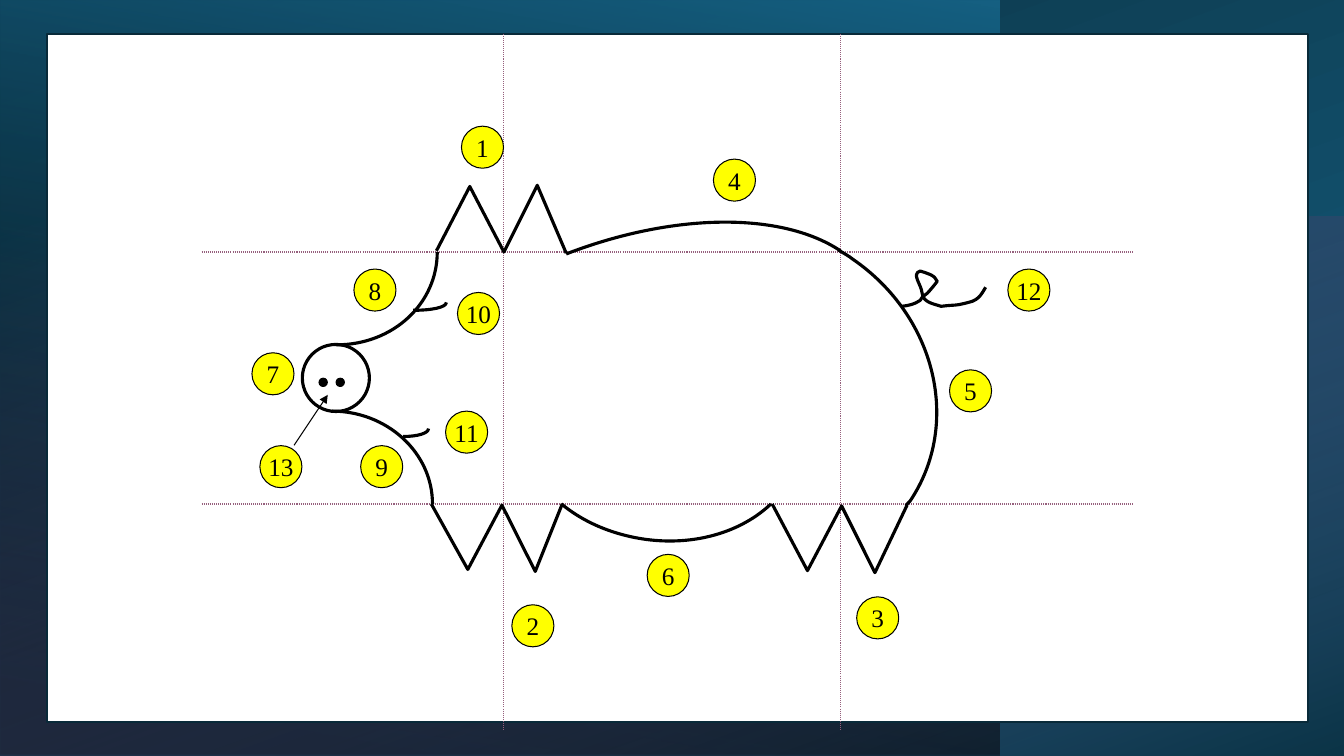
from lxml import etree
from pptx import Presentation
from pptx.dml.color import RGBColor
from pptx.enum.dml import MSO_LINE
from pptx.enum.shapes import MSO_CONNECTOR, MSO_SHAPE
from pptx.enum.text import MSO_ANCHOR, PP_ALIGN
from pptx.oxml import parse_xml
from pptx.oxml.ns import nsdecls, qn
from pptx.util import Cm, Pt

RECT, OVAL = MSO_SHAPE.RECTANGLE, MSO_SHAPE.OVAL
STRAIGHT = MSO_CONNECTOR.STRAIGHT
DOTTED = MSO_LINE.ROUND_DOT
MIDDLE, CENTER = MSO_ANCHOR.MIDDLE, PP_ALIGN.CENTER
BLACK, WHITE, YELLOW = "000000", "FFFFFF", "FFFF00"
W, H = 33.87, 19.05
BADGE = 1.06
BADGE_FONT = {"name": "Times New Roman", "size": Pt(18)}
rgb = RGBColor.from_string


def add_figure(shapes, kind, box, fill, line, width):
    """Add a preset shape; box is left, top, width, height in cm."""
    sp = shapes.add_shape(kind, *map(Cm, box))
    sp.shadow.inherit = False
    if fill:
        sp.fill.solid()
        sp.fill.fore_color.rgb = rgb(fill)
    else:
        sp.fill.background()
    sp.line.color.rgb = rgb(line)
    sp.line.width = Pt(width)
    return sp


def add_line(shapes, ends, color):
    """Add a thin straight line; ends is x1, y1, x2, y2 in cm."""
    cx = shapes.add_connector(STRAIGHT, *map(Cm, ends))
    cx.line.color.rgb = rgb(color)
    cx.line.width = Pt(0.75)
    etree.SubElement(cx.element.spPr, qn("a:effectLst"))
    return cx


prs = Presentation()
prs.slide_width, prs.slide_height = Cm(W), Cm(H)
s = prs.slides.add_slide(prs.slide_layouts[6])

# Background: box, rotation, gradient angle, stops (position %, colour, opacity %)
backdrops = [
    ((7.41, -7.41, H, W), 270, 200, [(8, "156082", 100), (100, "0B3041", 100)]),
    ((0, 0, 25.2, H), 180, 80, [(8, BLACK, 52), (100, "156082", 100)]),
    ((10.13, -4.67, 13.59, W), 270, 20, [(0, "D86ECC", 0), (100, BLACK, 46)]),
]
for box, rotation, angle, stops in backdrops:
    sp = s.shapes.add_shape(RECT, *map(Cm, box))
    sp.shadow.inherit = False
    sp.line.fill.background()
    sp.rotation = rotation
    spPr = sp.element.spPr
    spPr.find(qn("a:xfrm")).set("flipH", "1")
    gs = "".join(
        f'<a:gs pos="{pos * 1000}"><a:srgbClr val="{color}">'
        f'<a:alpha val="{alpha * 1000}"/></a:srgbClr></a:gs>'
        for pos, color, alpha in stops)
    spPr.insert(2, parse_xml(
        f'<a:gradFill {nsdecls("a")} rotWithShape="1"><a:gsLst>{gs}</a:gsLst>'
        f'<a:lin ang="{angle * 60000}" scaled="0"/></a:gradFill>'))

add_figure(s.shapes, RECT, (1.19, 0.85, 31.78, 17.35), WHITE, "092A39", 1.5)

guides = [(x, 0.85, x, 18.42) for x in (12.7, 21.17)]
guides += [(5.08, y, 28.58, y) for y in (6.35, 12.7)]
for ends in guides:
    add_line(s.shapes, ends, "96607D").line.dash_style = DOTTED

# Pig parts in drawing order: badge corner, curved or not, outline points.
# A curved outline has a start point, then three points per Bézier segment.
ears = [(11, 6.32), (11.84, 4.7), (12.7, 6.35), (13.54, 4.67), (14.27, 6.38)]
front_legs = [(10.87, 12.7), (11.79, 14.35), (12.65, 12.73), (13.49, 14.4),
              (14.17, 12.7)]
hind_legs = [(19.46, 12.7), (20.35, 14.38), (21.21, 12.75), (22.05, 14.43),
             (22.86, 12.73)]
back = [(14.27, 6.4), (16.97, 5.36), (19.69, 5.33), (21.18, 6.32)]
rump = [(21.13, 6.3), (21.26, 6.38), (21.39, 6.45), (21.49, 6.53),
        (23.6, 7.98), (24.23, 10.69), (22.94, 12.62),
        (22.89, 12.67), (22.86, 12.7), (22.83, 12.75)]
belly = [(19.43, 12.7), (18.54, 13.54), (17.12, 13.84), (15.75, 13.49),
         (15.16, 13.34), (14.61, 13.08), (14.15, 12.7)]
forehead = [(8.48, 8.69), (9.91, 8.69), (11.02, 7.65), (11.02, 6.35)]
chin = [(8.36, 10.36), (9.75, 10.36), (10.9, 11.4), (10.9, 12.7)]
upper_eye = [(10.41, 7.82), (10.87, 7.82), (11.25, 7.75), (11.25, 7.62)]
lower_eye = [(10.16, 11), (10.52, 11), (10.8, 10.92), (10.8, 10.8)]
tail = [(22.71, 7.72), (22.91, 7.7), (23.04, 7.67), (23.19, 7.57),
        (23.22, 7.52), (23.24, 7.49), (23.27, 7.47),
        (23.29, 7.44), (23.34, 7.42), (23.37, 7.39),
        (23.42, 7.34), (23.57, 7.16), (23.62, 7.09),
        (23.57, 6.93), (23.34, 6.88), (23.19, 6.83),
        (22.96, 6.91), (23.22, 7.16), (23.24, 7.39),
        (23.27, 7.62), (23.5, 7.65), (23.72, 7.72),
        (24.1, 7.67), (24.03, 7.72), (24.41, 7.62),
        (24.69, 7.57), (24.77, 7.34), (24.84, 7.24)]
parts = [
    ((11.63, 3.18), False, ears),
    ((12.9, 15.24), False, front_legs),
    ((21.59, 15.04), False, hind_legs),
    ((17.98, 4.01), True, back),
    ((23.93, 9.32), True, rump),
    ((16.31, 13.97), True, belly),
    ((6.35, 8.89), False, []),
    ((8.92, 6.78), True, forehead),
    ((9.09, 11.23), True, chin),
    ((11.53, 7.37), True, upper_eye),
    ((11.23, 10.36), True, lower_eye),
    ((25.4, 6.78), True, tail),
    ((6.55, 11.23), False, []),
]
SNOUT, NOSTRILS = 7, 13

for number, (corner, curved, outline) in enumerate(parts, 1):
    group = s.shapes.add_group_shape().shapes
    if outline:
        points = [(Cm(x), Cm(y)) for x, y in outline]
        builder = group.build_freeform(*points[0])
        builder.add_line_segments(points[1:], close=False)
        sp = builder.convert_to_shape()
        sp.shadow.inherit = False
        sp.fill.background()
        sp.line.color.rgb = rgb(BLACK)
        sp.line.width = Pt(2.25)
        if curved:
            steps = list(sp.element.iter(qn("a:lnTo")))
            for i in range(0, len(steps), 3):
                parent = steps[i].getparent()
                bezier = etree.SubElement(parent, qn("a:cubicBezTo"))
                for step in steps[i:i + 3]:
                    bezier.append(step[0])
                    parent.remove(step)
    elif number == SNOUT:
        add_figure(group, OVAL, (7.62, 8.68, 1.69, 1.69), None, BLACK, 2.25)
    elif number == NOSTRILS:
        for x in (8.04, 8.47):
            add_figure(group, OVAL, (x, 9.53, 0.21, 0.21), BLACK, BLACK, 0.75)
        arrow = add_line(group, (7.41, 11.22, 8.26, 9.95), BLACK)
        etree.SubElement(arrow.line._get_or_add_ln(), qn("a:tailEnd"),
                         type="triangle")

    badge = add_figure(group, OVAL, (*corner, BADGE, BADGE), YELLOW, BLACK, 0.75)
    tf = badge.text_frame
    tf.word_wrap = False
    tf.vertical_anchor = MIDDLE
    p = tf.paragraphs[0]
    p.alignment = CENTER
    r = p.add_run()
    r.text = str(number)
    for name, value in BADGE_FONT.items():
        setattr(r.font, name, value)
    r.font.color.rgb = rgb(BLACK)

prs.save("out.pptx")
